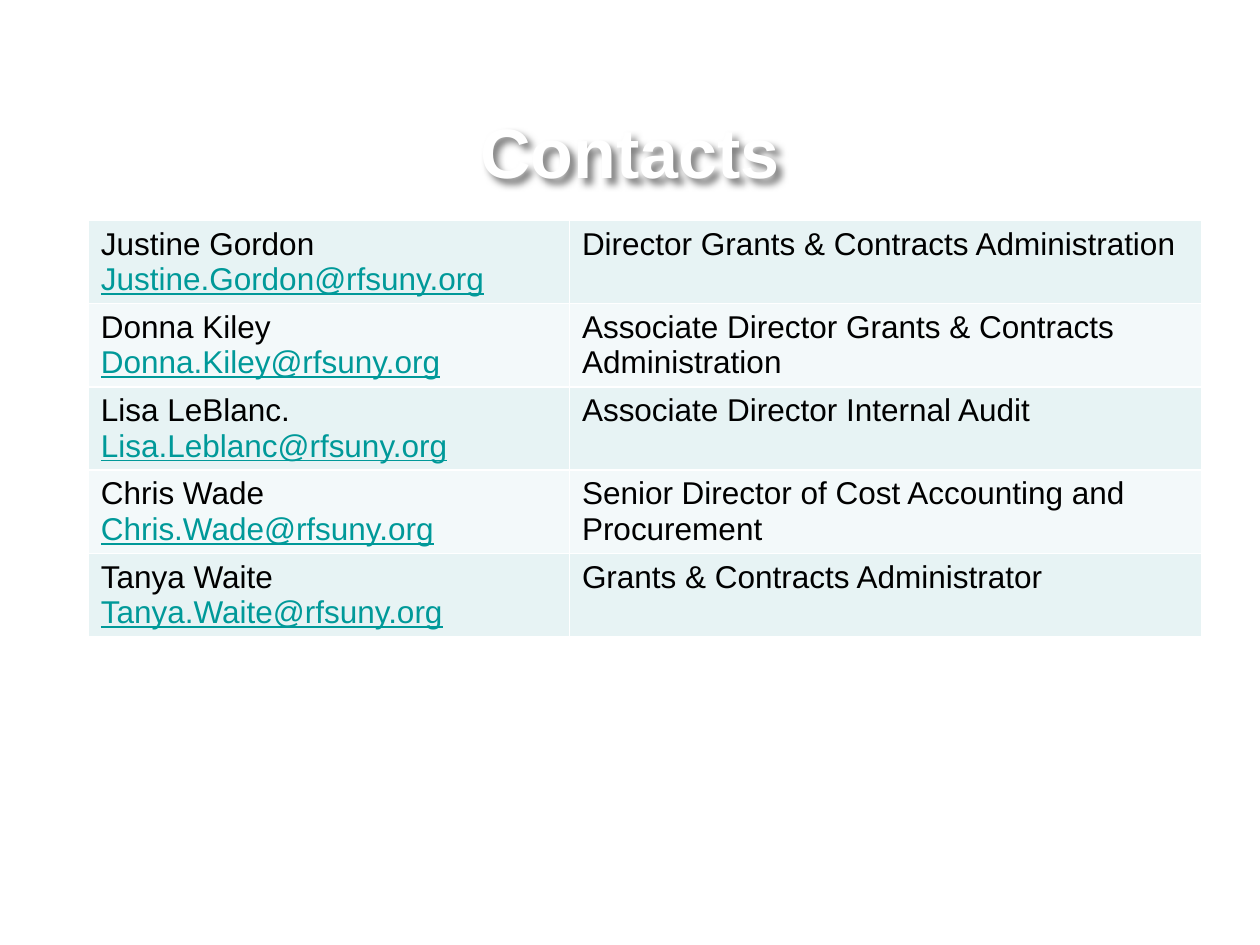
from dataclasses import dataclass

from pptx import Presentation
from pptx.dml.color import RGBColor
from pptx.enum.text import MSO_ANCHOR, PP_ALIGN
from pptx.oxml import parse_xml
from pptx.oxml.ns import nsdecls
from pptx.util import Pt


@dataclass(frozen=True)
class Theme:
    font: str = "Arial"
    title_size: int = 40
    body_size: int = 18
    white: str = "FFFFFF"
    text: str = "000000"
    link: str = "009999"
    bands: tuple = ("E7F3F4", "F3F9FA")


theme = Theme()

contacts = [
    ("Justine Gordon", "Justine.Gordon@rfsuny.org", "Director Grants & Contracts Administration"),
    ("Donna Kiley", "Donna.Kiley@rfsuny.org", "Associate Director Grants & Contracts Administration"),
    ("Lisa LeBlanc.", "Lisa.Leblanc@rfsuny.org", "Associate Director Internal Audit"),
    ("Chris Wade", "Chris.Wade@rfsuny.org", "Senior Director of Cost Accounting and Procurement"),
    ("Tanya Waite", "Tanya.Waite@rfsuny.org", "Grants & Contracts Administrator"),
]


def add_run(paragraph, text, size, color):
    run = paragraph.add_run()
    run.text = text
    run.font.name = theme.font
    run.font.size = Pt(size)
    run.font.color.rgb = RGBColor.from_string(color)
    return run


def add_borders(cell):
    properties = cell._tc.get_or_add_tcPr()
    for index, side in enumerate(("lnL", "lnR", "lnT", "lnB")):
        properties.insert(index, parse_xml(
            f'<a:{side} {nsdecls("a")} w="{Pt(1)}"><a:solidFill>'
            f'<a:srgbClr val="{theme.white}"/></a:solidFill></a:{side}>'))


presentation = Presentation()
presentation.slide_width, presentation.slide_height = Pt(720), Pt(540)
slide = presentation.slides.add_slide(presentation.slide_layouts[5])

# Title: an unfilled shape casts its shadow from the letters
title = slide.shapes.title
title.left, title.top, title.width, title.height = Pt(72), Pt(60), Pt(576), Pt(52)
title.text_frame.vertical_anchor = MSO_ANCHOR.MIDDLE
title_paragraph = title.text_frame.paragraphs[0]
title_paragraph.alignment = PP_ALIGN.CENTER
title_run = add_run(title_paragraph, "Contacts", theme.title_size, theme.white)
title_run.font.bold = True
title.fill.background()
title.line.fill.background()
title._element.spPr.append(parse_xml(
    f'<a:effectLst {nsdecls("a")}><a:outerShdw blurRad="{Pt(4)}" dist="{Pt(4)}" dir="2700000" '
    f'algn="tl" rotWithShape="0"><a:srgbClr val="{theme.text}"><a:alpha val="50000"/></a:srgbClr>'
    '</a:outerShdw></a:effectLst>'))

# Contact table
row_height = 47.5
table = slide.shapes.add_table(
    len(contacts), 2, Pt(50.4), Pt(126), Pt(636.5), Pt(row_height * len(contacts))).table
table.first_row = False
table.horz_banding = False
table.columns[0].width, table.columns[1].width = Pt(275), Pt(361.5)

for index, (name, email, role) in enumerate(contacts):
    person_cell, role_cell = table.cell(index, 0), table.cell(index, 1)
    for cell in (person_cell, role_cell):
        cell.fill.solid()
        cell.fill.fore_color.rgb = RGBColor.from_string(theme.bands[index % 2])
        add_borders(cell)

    add_run(person_cell.text_frame.paragraphs[0], name, theme.body_size, theme.text)
    email_run = add_run(person_cell.text_frame.add_paragraph(), email, theme.body_size, theme.link)
    email_run.font.underline = True
    add_run(role_cell.text_frame.paragraphs[0], role, theme.body_size, theme.text)

presentation.save("out.pptx")
